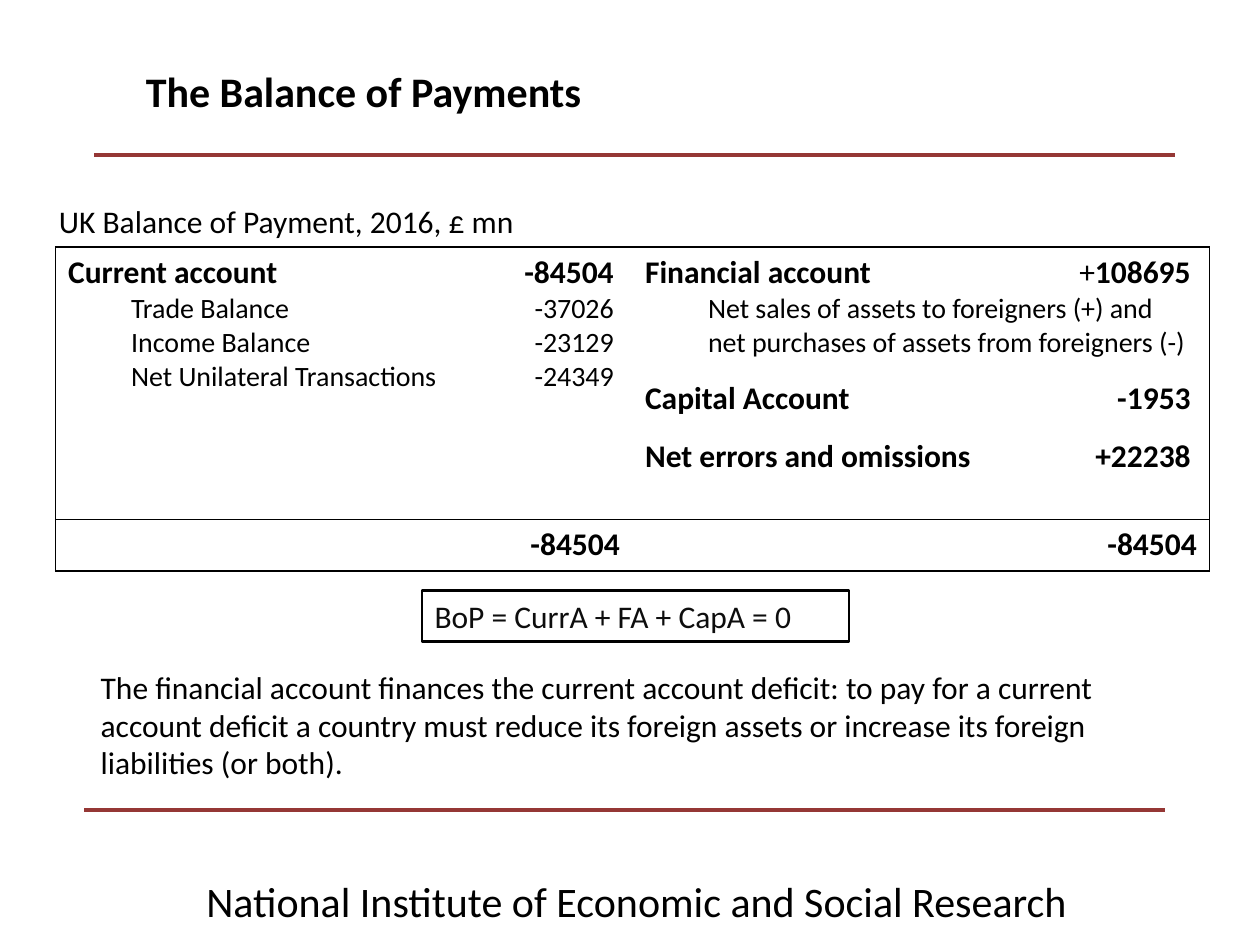
from dataclasses import dataclass

from lxml.etree import SubElement as Sub
from pptx import Presentation
from pptx.dml.color import RGBColor as Rgb
from pptx.enum.shapes import MSO_CONNECTOR as Conn, MSO_SHAPE as Shape
from pptx.enum.text import PP_ALIGN as Align
from pptx.oxml import parse_xml
from pptx.oxml.ns import nsdecls, qn
from pptx.util import Cm, Pt


@dataclass(frozen=True)
class Theme:
    font: str = "Calibri"
    black: str = "000000"
    ink: str = "0D0D0D"
    white: str = "FFFFFF"
    rule: str = "953735"
    head: int = 24
    body: int = 18
    small: int = 16


@dataclass(frozen=True)
class Label:
    text: str
    box: tuple[float, float, float, float]  # left, top, width, height in cm
    size: int
    bold: bool = False


@dataclass(frozen=True)
class Entry:
    name: str
    value: str = ""
    sub: bool = False
    space: float = 1.0
    sign: str = ""  # set in regular weight before the value


THEME = Theme()
INDENT, EDGE = 1.27, 11.0  # tab stops in a cell, cm

LABELS = (
    Label("National Institute of Economic and Social Research",
          (3.91, 17.53, 20.19, 1.02), THEME.head),
    Label("The financial account finances the current account deficit: to pay "
          "for a current account deficit a country must reduce its foreign "
          "assets or increase its foreign liabilities (or both).",
          (1.78, 13.34, 21.92, 2.57), THEME.body),
    Label("The Balance of Payments", (2.69, 1.19, 20.4, 1.27), THEME.head, True),
    Label("UK Balance of Payment, 2016, £ mn", (0.94, 3.94, 11.81, 1.02), THEME.body),
)
RULES = ((1.9, 3.12), (1.7, 16.33))  # left, top in cm
SPAN = 21.79

SIDES = (
    (
        Entry("Current account", "-84504"),
        Entry("Trade Balance", "-37026", sub=True),
        Entry("Income Balance", "-23129", sub=True),
        Entry("Net Unilateral Transactions", "-24349", sub=True),
    ),
    (
        Entry("Financial account", "108695", sign="+"),
        Entry("Net sales of assets to foreigners (+) and "
              "net purchases of assets from foreigners (-)", sub=True),
        Entry("Capital Account", "-1953", space=1.5),
        Entry("Net errors and omissions", "+22238", space=1.5),
    ),
)
TOTALS = ("-84504", "-84504")


def add_run(para, text: str, size: int, bold: bool = False,
            color: str = THEME.black) -> None:
    run = para.add_run()
    run.text = text
    font = run.font
    font.name, font.size, font.bold = THEME.font, Pt(size), bold
    font.color.rgb = Rgb.from_string(color)


def add_label(slide, label: Label) -> None:
    frame = slide.shapes.add_textbox(*map(Cm, label.box)).text_frame
    frame.word_wrap = True
    add_run(frame.paragraphs[0], label.text, label.size, label.bold)


def add_rule(slide, left: float, top: float) -> None:
    line = slide.shapes.add_connector(
        Conn.STRAIGHT, Cm(left), Cm(top), Cm(left + SPAN), Cm(top))
    line.line.color.rgb = Rgb.from_string(THEME.rule)
    line.line.width = Pt(2.25)
    Sub(line._element.spPr, qn("a:effectLst"))


def set_tabs(para) -> None:
    tabs = Sub(para._p.get_or_add_pPr(), qn("a:tabLst"))
    for pos, side in ((INDENT, "l"), (EDGE, "r")):
        Sub(tabs, qn("a:tab"), pos=str(int(Cm(pos))), algn=side)


def add_entry(para, entry: Entry) -> None:
    size = THEME.small if entry.sub else THEME.body
    bold = not entry.sub
    para.line_spacing = entry.space
    if not entry.value:
        para._p.get_or_add_pPr().set("marL", str(int(Cm(INDENT))))
        add_run(para, entry.name, size, bold)
        return
    set_tabs(para)
    add_run(para, ("\t" if entry.sub else "") + entry.name, size, bold)
    add_run(para, "\t" + entry.sign, size, bold and not entry.sign)
    add_run(para, entry.value, size, bold)


def set_borders(cell, sides: str) -> None:
    props = cell._tc.get_or_add_tcPr()
    for spot, side in enumerate("LRTB"):
        fill = (f'<a:solidFill><a:srgbClr val="{THEME.black}"/></a:solidFill>'
                if side in sides else "<a:noFill/>")
        props.insert(spot, parse_xml(
            f'<a:ln{side} {nsdecls("a")} w="{int(Pt(1))}">{fill}</a:ln{side}>'))


def add_accounts(slide) -> None:
    grid = slide.shapes.add_table(
        2, 2, Cm(1.12), Cm(4.98), Cm(23.26), Cm(6.53)).table
    grid.first_row = grid.horz_banding = False
    for row, tall in zip(grid.rows, (5.49, 1.04)):
        row.height = Cm(tall)
    for col, (side, total) in enumerate(zip(SIDES, TOTALS)):
        top, foot = grid.cell(0, col), grid.cell(1, col)
        for cell in (top, foot):
            cell.fill.background()
            set_borders(cell, "TB" + "LR"[col])
        frame = top.text_frame
        for num, entry in enumerate(side):
            add_entry(frame.add_paragraph() if num else frame.paragraphs[0], entry)
        para = foot.text_frame.paragraphs[0]
        para.alignment = Align.RIGHT
        add_run(para, total, THEME.body, True)


def add_formula(slide) -> None:
    box = slide.shapes.add_shape(
        Shape.RECTANGLE, Cm(8.51), Cm(11.91), Cm(8.61), Cm(1.02))
    box.shadow.inherit = False
    box.fill.solid()
    box.fill.fore_color.rgb = Rgb.from_string(THEME.white)
    box.line.color.rgb = Rgb.from_string(THEME.black)
    box.line.width = Pt(1.5)
    box.text_frame.word_wrap = True
    para = box.text_frame.paragraphs[0]
    para.alignment = Align.LEFT
    add_run(para, "BoP = CurrA + FA + CapA = 0", THEME.body, color=THEME.ink)


def main() -> None:
    deck = Presentation()
    deck.slide_width, deck.slide_height = Cm(25.4), Cm(19.05)
    slide = deck.slides.add_slide(deck.slide_layouts[6])
    # Frame rules
    for left, top in RULES:
        add_rule(slide, left, top)
    # Accounts and identity
    add_accounts(slide)
    add_formula(slide)
    # Title, caption, comment and footer
    for label in LABELS:
        add_label(slide, label)
    deck.save("out.pptx")


if __name__ == "__main__":
    main()
